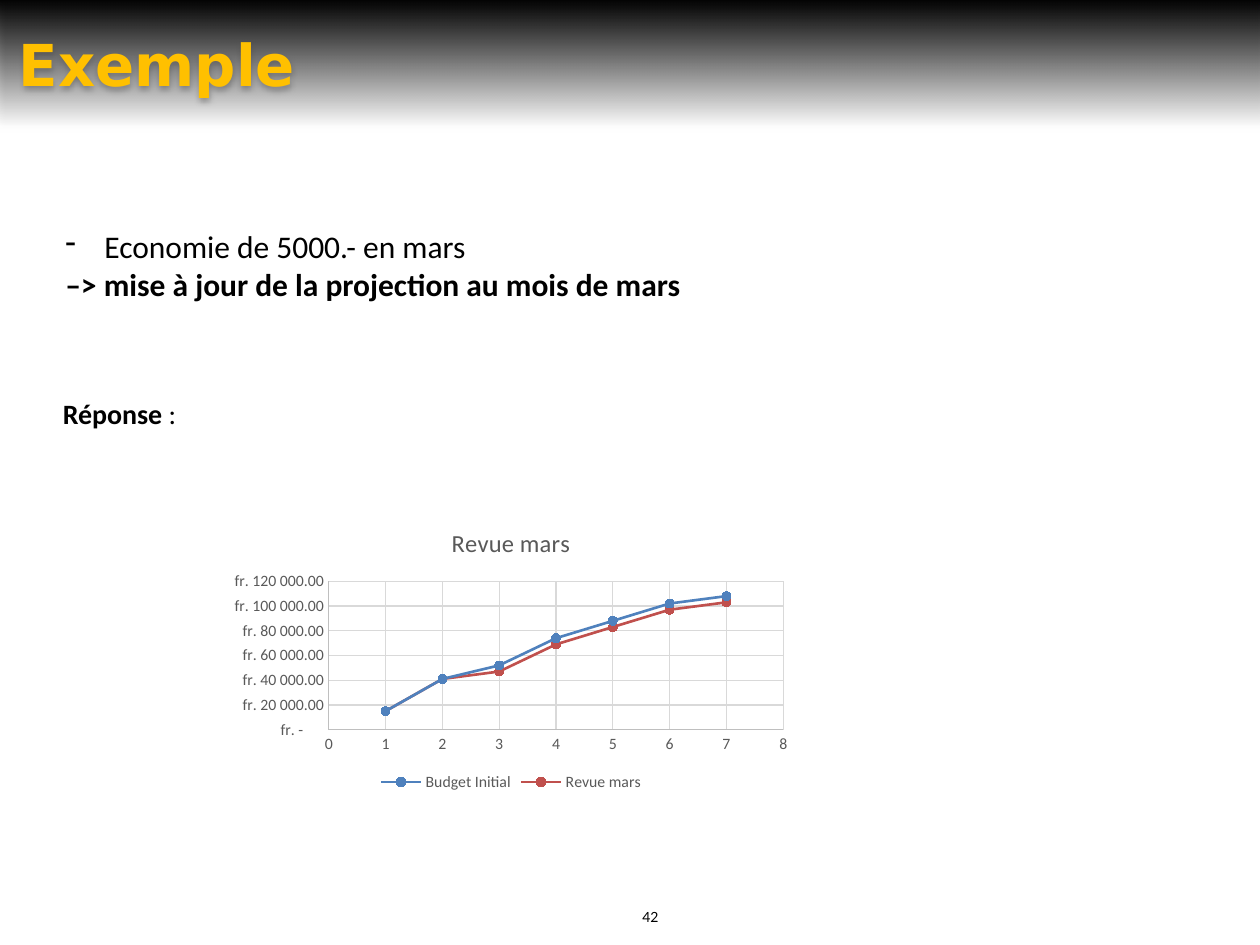
import dataclasses

import lxml.etree
import pptx
import pptx.chart.data
import pptx.dml.color
import pptx.enum.chart
import pptx.enum.shapes
import pptx.enum.text
import pptx.oxml
import pptx.oxml.ns
import pptx.util

Inches = pptx.util.Inches
Pt = pptx.util.Pt
qn = pptx.oxml.ns.qn


def color(value):
    return pptx.dml.color.RGBColor.from_string(value)


@dataclasses.dataclass(frozen=True)
class Theme:
    white: str = "FFFFFF"
    black: str = "000000"
    charcoal: str = "4B4B4B"
    gold: str = "FFC000"
    label: str = "595959"
    axis: str = "BFBFBF"
    grid: str = "D9D9D9"
    series: tuple = ("4F81BD", "C0504D")
    heading_font: str = "DejaVu Sans"
    body_font: str = "Calibri"
    number_font: str = "Lato"
    heading_size: int = 33
    body_size: int = 18
    answer_size: int = 16
    chart_title_size: int = 14
    chart_size: int = 10
    chart_label_size: int = 9
    number_size: int = 8


class SlideBuilder:
    def __init__(self, slide, theme):
        self.slide = slide
        self.theme = theme

    def style_font(self, font, size, value=None, name=None, bold=False):
        font.size = Pt(size)
        font.name = name or self.theme.body_font
        font.color.rgb = color(value or self.theme.black)
        font.bold = bold

    def rectangle(self, left, top, width, height):
        shape = self.slide.shapes.add_shape(
            pptx.enum.shapes.MSO_SHAPE.RECTANGLE,
            Inches(left), Inches(top), Inches(width), Inches(height))
        shape.shadow.inherit = False
        return shape

    def background(self, width, height):
        shape = self.rectangle(0, 0, width, height)
        shape.fill.solid()
        shape.fill.fore_color.rgb = color(self.theme.white)
        shape.line.color.rgb = color(self.theme.white)
        shape.line.width = Pt(2)

    def title_band(self, text, width, height):
        shape = self.rectangle(0, 0, width, height)
        shape.line.fill.background()
        shape.fill.gradient()
        shape.fill.gradient_angle = 90
        stops = shape.fill.gradient_stops
        for stop, value, position in zip(
                stops, (self.theme.charcoal, self.theme.black), (0, 1)):
            stop.color.rgb = color(value)
            stop.position = position
        properties = shape._element.spPr
        clear = properties.find(".//" + qn("a:srgbClr"))
        lxml.etree.SubElement(clear, qn("a:alpha"), val="0")
        shadow = lxml.etree.SubElement(
            properties.find(qn("a:effectLst")), qn("a:outerShdw"),
            blurRad=str(Pt(3.1)), dist=str(Pt(1.8)), dir="5400000", rotWithShape="0")
        shade = lxml.etree.SubElement(shadow, qn("a:srgbClr"), val=self.theme.black)
        lxml.etree.SubElement(shade, qn("a:alpha"), val="35000")
        frame = shape.text_frame
        frame.margin_left = frame.margin_right = Inches(0.15)
        frame.margin_top = frame.margin_bottom = Inches(0.15)
        frame.vertical_anchor = pptx.enum.text.MSO_ANCHOR.MIDDLE
        paragraph = frame.paragraphs[0]
        paragraph.text = text
        paragraph.alignment = pptx.enum.text.PP_ALIGN.LEFT
        self.style_font(paragraph.font, self.theme.heading_size, self.theme.gold,
                        self.theme.heading_font, True)

    def text_box(self, left, top, width, height, wrap=True):
        frame = self.slide.shapes.add_textbox(
            Inches(left), Inches(top), Inches(width), Inches(height)).text_frame
        frame.word_wrap = wrap
        return frame

    def bullet(self, paragraph, character, indent):
        properties = paragraph._p.get_or_add_pPr()
        properties.set("marL", str(Inches(indent)))
        properties.set("indent", str(-Inches(indent)))
        lxml.etree.SubElement(properties, qn("a:buChar"), char=character)

    def statement(self, item, conclusion):
        frame = self.text_box(0.42, 1.75, 5.13, 0.71, wrap=False)
        first, second = frame.paragraphs[0], frame.add_paragraph()
        self.bullet(first, "-", 0.31)
        for paragraph, text, bold in ((first, item, False), (second, conclusion, True)):
            paragraph.text = text
            self.style_font(paragraph.font, self.theme.body_size, bold=bold)

    def answer(self, label, ending):
        paragraph = self.text_box(0.4, 3.1, 8.11, 0.37).paragraphs[0]
        self.style_font(paragraph.font, self.theme.answer_size)
        for text, bold in ((label, True), (ending, False)):
            run = paragraph.add_run()
            run.text = text
            run.font.bold = bold

    def page_number(self, text):
        paragraph = self.text_box(5, 7.16, 3.27, 0.24).paragraphs[0]
        paragraph.text = text
        self.style_font(paragraph.font, self.theme.number_size,
                        name=self.theme.number_font)

    def style_axis(self, axis, maximum, step, number_format):
        axis.minimum_scale, axis.maximum_scale = 0, maximum
        axis.major_unit = step
        axis.major_tick_mark = axis.minor_tick_mark = pptx.enum.chart.XL_TICK_MARK.NONE
        axis.has_major_gridlines = True
        for line, value in ((axis.format.line, self.theme.axis),
                            (axis.major_gridlines.format.line, self.theme.grid)):
            line.color.rgb = color(value)
            line.width = Pt(0.75)
        labels = axis.tick_labels
        labels.number_format = number_format
        labels.number_format_is_linked = False
        self.style_font(labels.font, self.theme.chart_label_size, self.theme.label)

    def scatter_chart(self, title, budgets):
        data = pptx.chart.data.XyChartData()
        for name, values in budgets.items():
            series = data.add_series(name)
            for month, value in enumerate(values, 1):
                series.add_data_point(month, value)
        chart = self.slide.shapes.add_chart(
            pptx.enum.chart.XL_CHART_TYPE.XY_SCATTER_LINES,
            Inches(1.77), Inches(4.04), Inches(4.57), Inches(2.28), data).chart
        self.style_font(chart.font, self.theme.chart_size)
        chart.has_title = True
        paragraph = chart.chart_title.text_frame.paragraphs[0]
        paragraph.text = title
        self.style_font(paragraph.font, self.theme.chart_title_size, self.theme.label)
        chart.chart_title.include_in_layout = False
        chart.has_legend = True
        chart.legend.position = pptx.enum.chart.XL_LEGEND_POSITION.BOTTOM
        chart.legend.include_in_layout = False
        self.style_font(chart.legend.font, self.theme.chart_label_size, self.theme.label)
        self.style_axis(chart.category_axis, 8, 1, "General")
        self.style_axis(chart.value_axis, 120000, 20000,
                        r'"fr. "#\ ##0.00;"fr. "-#\ ##0.00;"fr. -"??_ ')
        plot = chart.plots[0]
        plot.vary_by_categories = False
        for series, value in zip(plot.series, self.theme.series):
            series.smooth = False
            series.format.line.color.rgb = color(value)
            series.format.line.width = Pt(1.5)
            marker = series.marker
            marker.style = pptx.enum.chart.XL_MARKER_STYLE.CIRCLE
            marker.size = 5
            marker.format.fill.solid()
            marker.format.fill.fore_color.rgb = color(value)
            marker.format.line.color.rgb = color(value)


def main():
    presentation = pptx.Presentation()
    presentation.slide_width, presentation.slide_height = Inches(10), Inches(7.5)
    slide = presentation.slides.add_slide(presentation.slide_layouts[6])
    builder = SlideBuilder(slide, Theme())
    builder.background(10, 7.5)
    builder.title_band("Exemple", 10.02, 1)
    builder.statement("Economie de 5000.- en mars",
                      "–> mise à jour de la projection au mois de mars")
    builder.page_number("42")
    builder.answer("Réponse", " :")
    builder.scatter_chart("Revue mars", {
        "Budget Initial": (15000, 41000, 52000, 74000, 88000, 102000, 108000),
        "Revue mars": (15000, 41000, 47000, 69000, 83000, 97000, 103000),
    })
    presentation.save("out.pptx")


if __name__ == "__main__":
    main()
